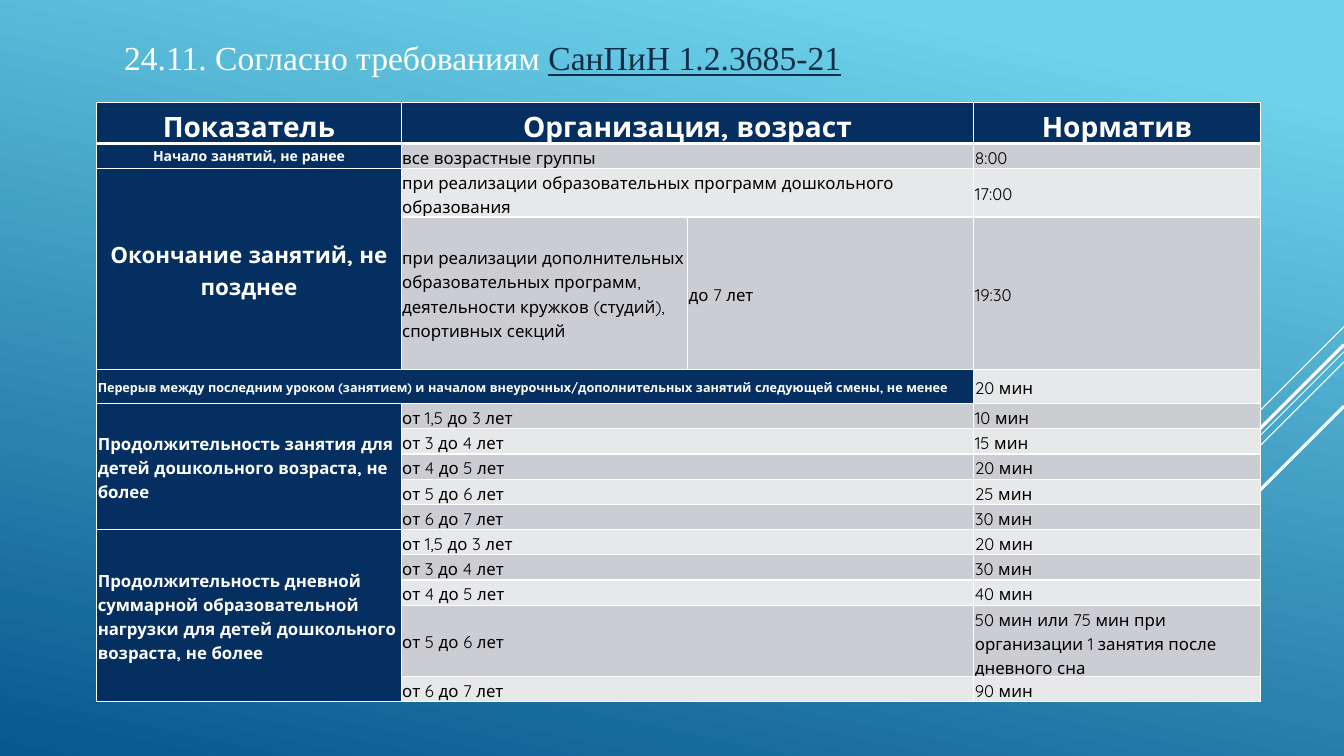
from dataclasses import dataclass

from lxml.etree import SubElement
from pptx import Presentation
from pptx.dml.color import RGBColor
from pptx.enum.shapes import MSO_CONNECTOR as Connector
from pptx.enum.text import MSO_ANCHOR as Anchor, MSO_AUTO_SIZE as AutoSize, PP_ALIGN as Align
from pptx.oxml.ns import qn
from pptx.util import Inches, Pt


@dataclass(frozen=True)
class Theme:
    white: str = "FFFFFF"
    black: str = "000000"
    navy: str = "052F61"
    link: str = "0D2E46"
    bands: tuple = ("E7E8EA", "CCCDD2")
    sky: tuple = ((0.1, "6ED2EB"), (1.0, "06588E"))
    title_font: str = "Times New Roman"
    table_font: str = "Quicksand"
    title: int = 24
    header: int = 20
    group: int = 16
    body: int = 12
    small: int = 10
    tiny: int = 9


THEME = Theme()
AGES = ["от 1,5 до 3 лет", "от 3 до 4 лет", "от 4 до 5 лет", "от 5 до 6 лет", "от 6 до 7 лет"]
LESSON = ["10 мин", "15 мин", "20 мин", "25 мин", "30 мин"]
DAILY = ["20 мин", "30 мин", "40 мин",
         "50 мин или 75 мин при организации 1 занятия после дневного сна", "90 мин"]


def age_rows(label, norms):
    labels = [label] + [None] * (len(AGES) - 1)
    return [(first, age, None, norm) for first, age, norm in zip(labels, AGES, norms)]


ROWS = [
    ("Показатель", "Организация, возраст", None, "Норматив"),
    ("Начало занятий, не ранее", "все возрастные группы", None, "8:00"),
    ("Окончание занятий, не позднее",
     "при реализации образовательных программ дошкольного образования", None, "17:00"),
    (None, "при реализации дополнительных образовательных программ, деятельности кружков "
     "(студий), спортивных секций", "до 7 лет", "19:30"),
    ("Перерыв между последним уроком (занятием) и началом внеурочных/дополнительных "
     "занятий следующей смены, не менее", None, None, "20 мин"),
    *age_rows("Продолжительность занятия для детей дошкольного возраста, не более", LESSON),
    *age_rows("Продолжительность дневной суммарной образовательной нагрузки для детей "
              "дошкольного возраста, не более", DAILY),
]
HEIGHTS = [0.37, 0.23, 0.44, 1.51, 0.34] + [0.2] * 8 + [0.52, 0.2]
WIDTHS = [3.02] + [2.84] * 3
LABEL_SIZES = {1: THEME.small, 2: THEME.group, 4: THEME.tiny}
BREAK_ROW = 4
LABEL_SPANS = [(2, 3), (5, 9), (10, 14)]


def add_span(para, text, font, size, color, bold=False, underline=False):
    span = para.add_run()
    span.text = text
    span.font.name = font
    span.font.size = Pt(size)
    span.font.bold = bold
    span.font.underline = underline
    span.font.color.rgb = RGBColor.from_string(color)


def paint_background(page):
    fill = page.background.fill
    fill.gradient()
    fill.gradient_angle = 360 - 102
    for stop, (position, color) in zip(fill.gradient_stops, THEME.sky):
        stop.position = position
        stop.color.rgb = RGBColor.from_string(color)


def draw_rays(page, right):
    for top, reach, weight in [(3.24, 1, 0.75), (3.49, 3.26, 0.75), (3.59, 2.08, 0.75),
                               (3.42, 1.91, 2.25), (4.03, 1.39, 2.25)]:
        ray = page.shapes.add_connector(
            Connector.STRAIGHT, Inches(right), Inches(top),
            Inches(right - reach), Inches(top + reach))
        ray.line.color.rgb = RGBColor.from_string(THEME.white)
        ray.line.width = Pt(weight)
        SubElement(ray._element.spPr, qn("a:effectLst"))


def write_title(page, left, top, width, height):
    title = page.shapes.title
    title.left, title.top = Inches(left), Inches(top)
    title.width, title.height = Inches(width), Inches(height)
    frame = title.text_frame
    frame.word_wrap = True
    frame.auto_size = AutoSize.SHAPE_TO_FIT_TEXT
    frame.vertical_anchor = Anchor.TOP
    para = frame.paragraphs[0]
    para.alignment = Align.JUSTIFY
    para.space_before = Pt(0)
    para._p.get_or_add_pPr().set("marL", "0")
    para._p.get_or_add_pPr().set("indent", str(Inches(0.38)))
    add_span(para, "24.11. Согласно требованиям ", THEME.title_font, THEME.title, THEME.white)
    add_span(para, "СанПиН 1.2.3685-21", THEME.title_font, THEME.title, THEME.link,
             underline=True)


def set_borders(cell, bottom):
    properties = cell._tc.get_or_add_tcPr()
    for side, weight in [("L", 1), ("R", 1), ("T", 1), ("B", bottom)]:
        line = SubElement(properties, qn(f"a:ln{side}"), w=str(Pt(weight)))
        SubElement(SubElement(line, qn("a:solidFill")), qn("a:srgbClr"), val=THEME.white)


def style_cell(cell, row, column, text):
    is_header = row == 0
    is_label = is_header or column == 0 or (row == BREAK_ROW and column < 3)
    set_borders(cell, 3 if is_header else 1)
    cell.fill.solid()
    cell.fill.fore_color.rgb = RGBColor.from_string(
        THEME.navy if is_label else THEME.bands[row % 2])
    cell.margin_left = cell.margin_right = Inches(0.01)
    cell.margin_top = cell.margin_bottom = Inches(0.01)
    cell.vertical_anchor = Anchor.TOP if (row, column) == (1, 0) else Anchor.MIDDLE
    if text is None:
        return
    para = cell.text_frame.paragraphs[0]
    centred = is_header or (column == 0 and row in (1, 2))
    para.alignment = Align.CENTER if centred else Align.LEFT
    para.line_spacing = 1.15
    para.space_after = Pt(10)
    size = THEME.body
    if is_header:
        size = THEME.header
    elif column == 0:
        size = LABEL_SIZES.get(row, THEME.body)
    add_span(para, text, THEME.table_font, size,
             THEME.white if is_label else THEME.black, bold=is_label)


def build_table(page, left, top, width, height):
    table = page.shapes.add_table(len(ROWS), len(WIDTHS), Inches(left), Inches(top),
                                  Inches(width), Inches(height)).table
    table.horz_banding = False
    for column, size in zip(table.columns, WIDTHS):
        column.width = Inches(size)
    for line, size in zip(table.rows, HEIGHTS):
        line.height = Inches(size)
    for row, texts in enumerate(ROWS):
        for column, text in enumerate(texts):
            style_cell(table.cell(row, column), row, column, text)
        if row == BREAK_ROW:
            table.cell(row, 0).merge(table.cell(row, 2))
        elif texts[2] is None:
            table.cell(row, 1).merge(table.cell(row, 2))
    for first, last in LABEL_SPANS:
        table.cell(first, 0).merge(table.cell(last, 0))


def main():
    deck = Presentation()
    deck.slide_width, deck.slide_height = Inches(13.33), Inches(7.5)
    page = deck.slides.add_slide(deck.slide_layouts[5])
    paint_background(page)
    draw_rays(page, 13.33)
    write_title(page, 0.75, 0.32, 11.74, 0.5)
    build_table(page, 0.96, 1.02, sum(WIDTHS), sum(HEIGHTS))
    deck.save("out.pptx")


if __name__ == "__main__":
    main()
